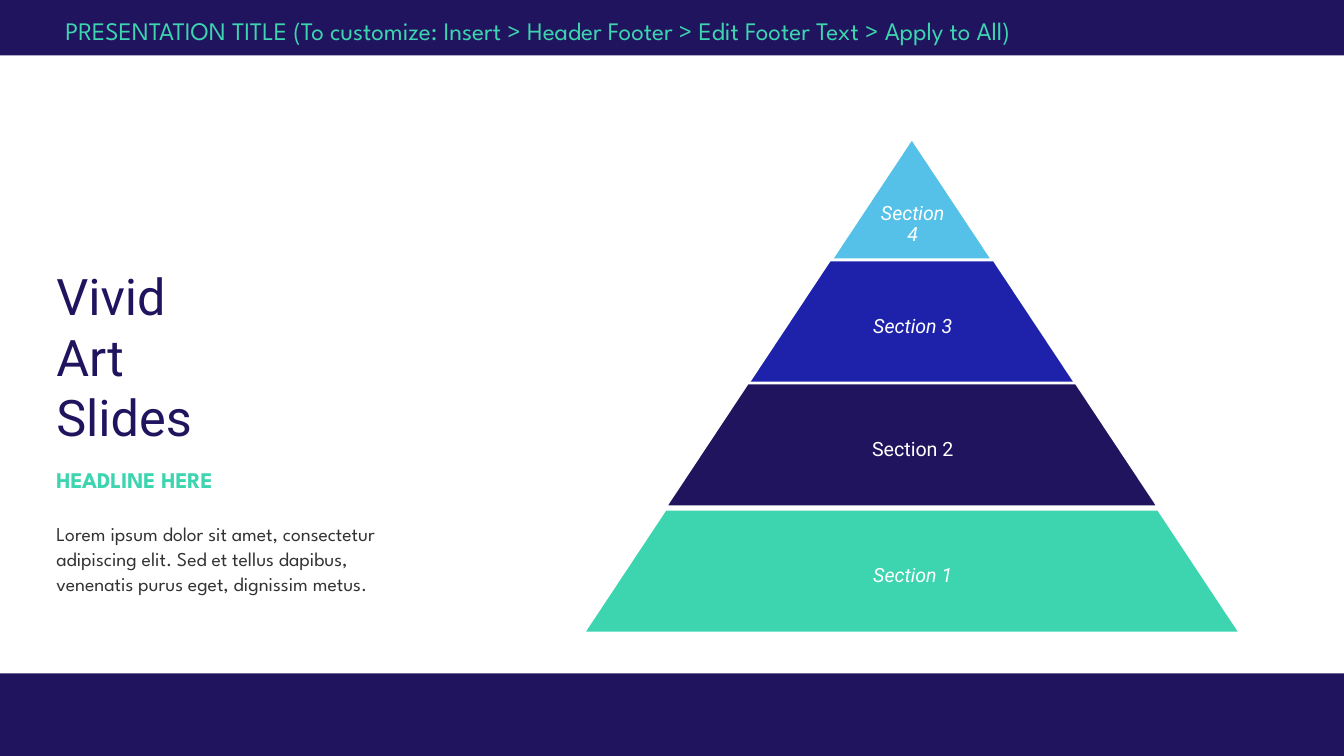
from pptx import Presentation
from pptx.dml.color import RGBColor
from pptx.enum.shapes import MSO_SHAPE as SHAPE
from pptx.enum.text import MSO_ANCHOR as ANCHOR, PP_ALIGN as ALIGN
from pptx.util import Cm, Pt

NAVY, MINT, WHITE, GREY = "21145F", "3CD5AF", "FFFFFF", "333333"
SPARTAN, ROBOTO = "League Spartan", "Roboto"
TIERS = [
    ("Section\v4", "55C1E9", 3.48, True),
    ("Section 3", "1E22AA", 6.55, True),
    ("Section 2", "20145E", 9.65, False),
    ("Section 1", MINT, 12.83, True),
]


def rgb(value):
    """Turn a hex string into a colour."""
    return RGBColor.from_string(value)


def set_attrs(obj, **values):
    """Set each given attribute on the object."""
    for name, value in values.items():
        setattr(obj, name, value)


def write(sp, text, color, frame, para=None, **font):
    """Fill a shape with one paragraph of formatted text."""
    tf = sp.text_frame
    set_attrs(tf, **frame)
    p = tf.paragraphs[0]
    p.text = text
    set_attrs(p, **(para or {}))
    for r in p.runs:
        set_attrs(r.font, **font)
        r.font.color.rgb = rgb(color)


def add_block(slide, kind, box, fill):
    """Add a plain filled shape without outline or shadow."""
    sp = slide.shapes.add_shape(kind, *(Cm(v) for v in box))
    sp.shadow.inherit = False
    sp.fill.solid()
    sp.fill.fore_color.rgb = rgb(fill)
    sp.line.fill.background()
    return sp


def add_text(slide, box, *args, **kwargs):
    """Add a text box with one formatted paragraph."""
    write(slide.shapes.add_textbox(*(Cm(v) for v in box)), *args, **kwargs)


def add_bands(slide, left, top, width, height):
    """Draw the header band with its title and the footer band."""
    header, footer = 1.4, 2.08
    add_block(slide, SHAPE.RECTANGLE, (left, top, width, header), NAVY)
    add_block(slide, SHAPE.RECTANGLE, (left, top + height - footer, width, footer), NAVY)
    add_text(slide, (left + 1.4, top + 0.25, 29.36, 1.02),
             "PRESENTATION TITLE (To customize: Insert > Header Footer > Edit Footer Text > Apply to All)",
             MINT, {"word_wrap": True}, size=Pt(18), name=SPARTAN)


def add_intro(slide, left, top, width):
    """Stack the slide title, headline and body text."""
    flush = {"word_wrap": True, "margin_left": 0, "margin_right": 0}
    add_text(slide, (left, top, width, 4.95), "Vivid\vArt\vSlides", NAVY,
             {**flush, "margin_top": 0, "margin_bottom": 0, "vertical_anchor": ANCHOR.MIDDLE},
             size=Pt(36), name=ROBOTO)
    add_text(slide, (left, top + 5.11, 4.17, 0.94), "HEADLINE HERE", MINT,
             {**flush, "word_wrap": False}, size=Pt(16), name=SPARTAN, bold=True)
    add_text(slide, (left, top + 6.48, 8.84, 2.77),
             "Lorem ipsum dolor sit amet, consectetur adipiscing elit. "
             "Sed et tellus dapibus, venenatis purus eget, dignissim metus.",
             GREY, flush, {"line_spacing": Pt(18)}, size=Pt(14), name=SPARTAN)


def add_pyramid(slide, center, step, height):
    """Draw the tiers from the tip down, each one step wider than the last."""
    for n, (label, fill, top, italic) in enumerate(TIERS, 1):
        width = n * step
        sp = add_block(slide, SHAPE.TRAPEZOID, (center - width / 2, top, width, height), fill)
        sp.adjustments[0] = step / 2 / height
        sp.line.color.rgb = rgb(WHITE)
        sp.line.width = Pt(2)
        bottom = 0.05 if n == 1 else height / (3 * n)
        frame = {"word_wrap": False, "vertical_anchor": ANCHOR.MIDDLE, "margin_left": Cm(0.05),
                 "margin_right": 0, "margin_top": Cm(0.25), "margin_bottom": Cm(bottom)}
        write(sp, label, WHITE, frame, {"alignment": ALIGN.CENTER, "line_spacing": 0.9},
              size=Pt(14), name=ROBOTO, italic=italic)


def main():
    """Build the slide and save it."""
    prs = Presentation()
    set_attrs(prs, slide_width=Cm(33.87), slide_height=Cm(19.05))
    slide = prs.slides.add_slide(prs.slide_layouts[6])
    add_bands(slide, 0, 0, 33.87, 19.05)
    add_pyramid(slide, 22.98, 4.14, 3.12)
    add_intro(slide, 1.42, 6.5, 11.63)
    prs.save("out.pptx")


if __name__ == "__main__":
    main()
